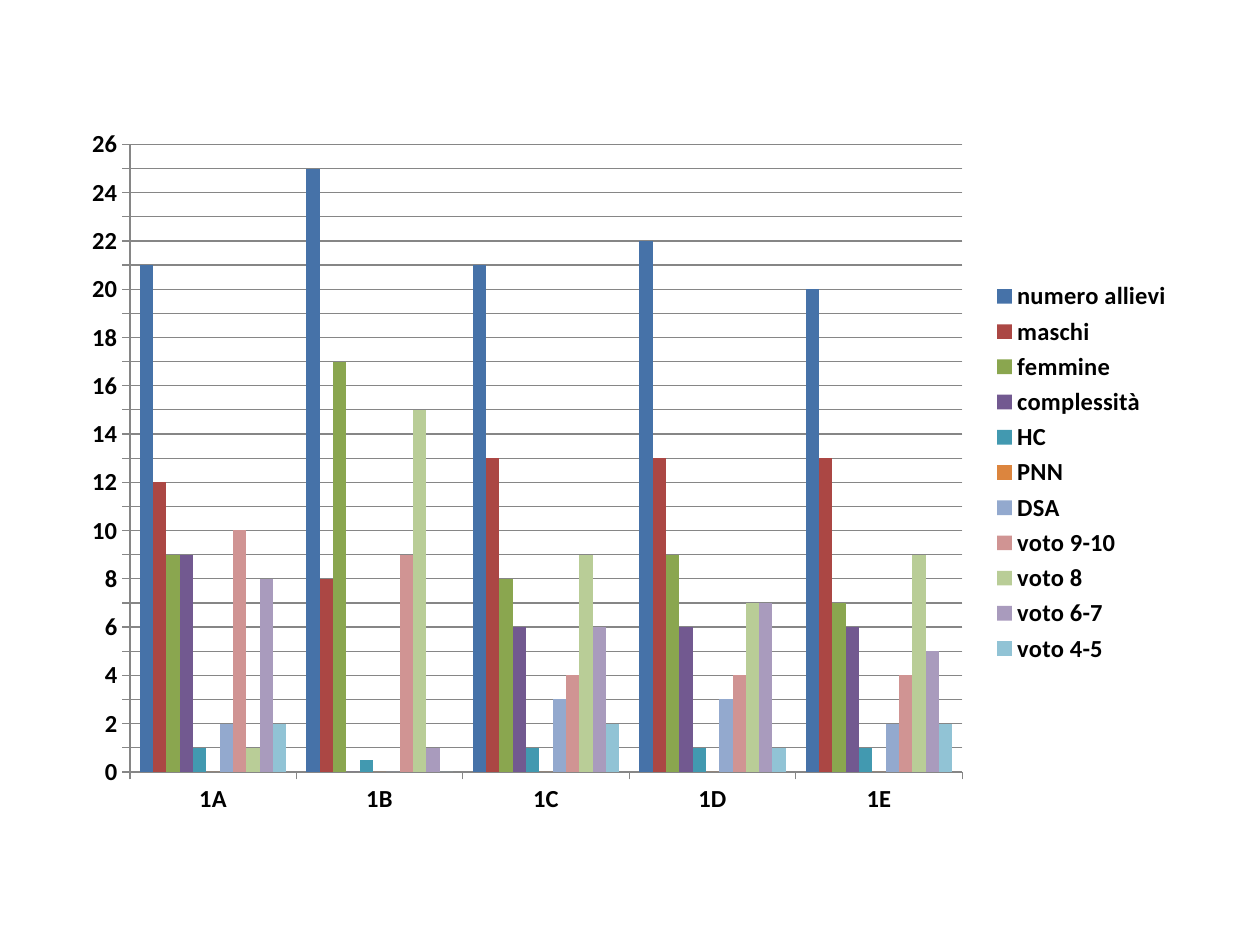
from lxml import etree
from pptx import Presentation
from pptx.chart.data import CategoryChartData
from pptx.dml.color import RGBColor
from pptx.enum.chart import XL_CHART_TYPE, XL_LEGEND_POSITION, XL_TICK_MARK
from pptx.oxml.ns import qn
from pptx.util import Pt

COLUMNS = XL_CHART_TYPE.COLUMN_CLUSTERED
RIGHT = XL_LEGEND_POSITION.RIGHT
OUTSIDE = XL_TICK_MARK.OUTSIDE
NO_TICK = XL_TICK_MARK.NONE

CLASSES = ["1A", "1B", "1C", "1D", "1E"]
MEASURES = [
    ("numero allievi", [21, 25, 21, 22, 20], "4672A8"),
    ("maschi", [12, 8, 13, 13, 13], "AB4744"),
    ("femmine", [9, 17, 8, 9, 7], "8AA64F"),
    ("complessità", [9, 0, 6, 6, 6], "725990"),
    ("HC", [1, 0.5, 1, 1, 1], "4299B0"),
    ("PNN", [0, 0, 0, 0, 0], "DC853E"),
    ("DSA", [2, 0, 3, 3, 2], "93A9CE"),
    ("voto 9-10", [10, 9, 4, 4, 4], "D09493"),
    ("voto 8", [1, 15, 9, 7, 9], "B9CD97"),
    ("voto 6-7", [8, 1, 6, 7, 5], "A99BBD"),
    ("voto 4-5", [2, 0, 2, 1, 2], "91C3D5"),
]


def color(hex_value):
    """Return the colour for a hex string."""
    return RGBColor.from_string(hex_value)


def style_line(line):
    """Give an axis or gridline its thin grey stroke."""
    line.color.rgb = color("868686")
    line.width = Pt(0.75)


def place_plot(chart, x, y, w, h):
    """Fix the inner plot area as fractions of the chart."""
    plot_area = chart.plots[0]._element.getparent()
    for layout in plot_area.findall(qn("c:layout")):
        plot_area.remove(layout)
    layout = etree.Element(qn("c:layout"))
    manual = etree.SubElement(layout, qn("c:manualLayout"))
    settings = [("layoutTarget", "inner"), ("xMode", "edge"), ("yMode", "edge"),
                ("x", x), ("y", y), ("w", w), ("h", h)]
    for tag, value in settings:
        etree.SubElement(manual, qn(f"c:{tag}")).set("val", str(value))
    plot_area.insert(0, layout)


def add_class_chart(slide, left, top, width, height):
    """Draw the clustered columns for every class in the given box."""
    results = CategoryChartData()
    results.categories = CLASSES
    for name, values, _ in MEASURES:
        results.add_series(name, values)
    chart = slide.shapes.add_chart(
        COLUMNS, Pt(left), Pt(top), Pt(width), Pt(height), results).chart
    chart.has_title = False
    chart.font.name = "Calibri"
    chart.font.size = Pt(14)
    chart.font.bold = True
    chart.font.color.rgb = color("000000")
    chart.has_legend = True
    chart.legend.position = RIGHT
    chart.legend.include_in_layout = False

    columns = chart.plots[0]
    columns.gap_width = 150
    columns.overlap = 0
    columns.vary_by_categories = False
    for series, (_, _, fill) in zip(columns.series, MEASURES):
        series.format.fill.solid()
        series.format.fill.fore_color.rgb = color(fill)

    for axis in (chart.category_axis, chart.value_axis):
        axis.major_tick_mark = OUTSIDE
        axis.minor_tick_mark = NO_TICK
        style_line(axis.format.line)
    counts = chart.value_axis
    counts.minimum_scale = 0
    counts.maximum_scale = 26
    counts.major_unit = 1
    counts.has_major_gridlines = True
    style_line(counts.major_gridlines.format.line)
    place_plot(chart, 0.05, 0.04, 0.75, 0.88)


def main():
    """Build the slide and save it."""
    deck = Presentation()
    deck.slide_width, deck.slide_height = Pt(720), Pt(540)
    slide = deck.slides.add_slide(deck.slide_layouts[6])
    add_class_chart(slide, 42.5, 66.25, 634.3, 407.5)
    deck.save("out.pptx")


if __name__ == "__main__":
    main()
